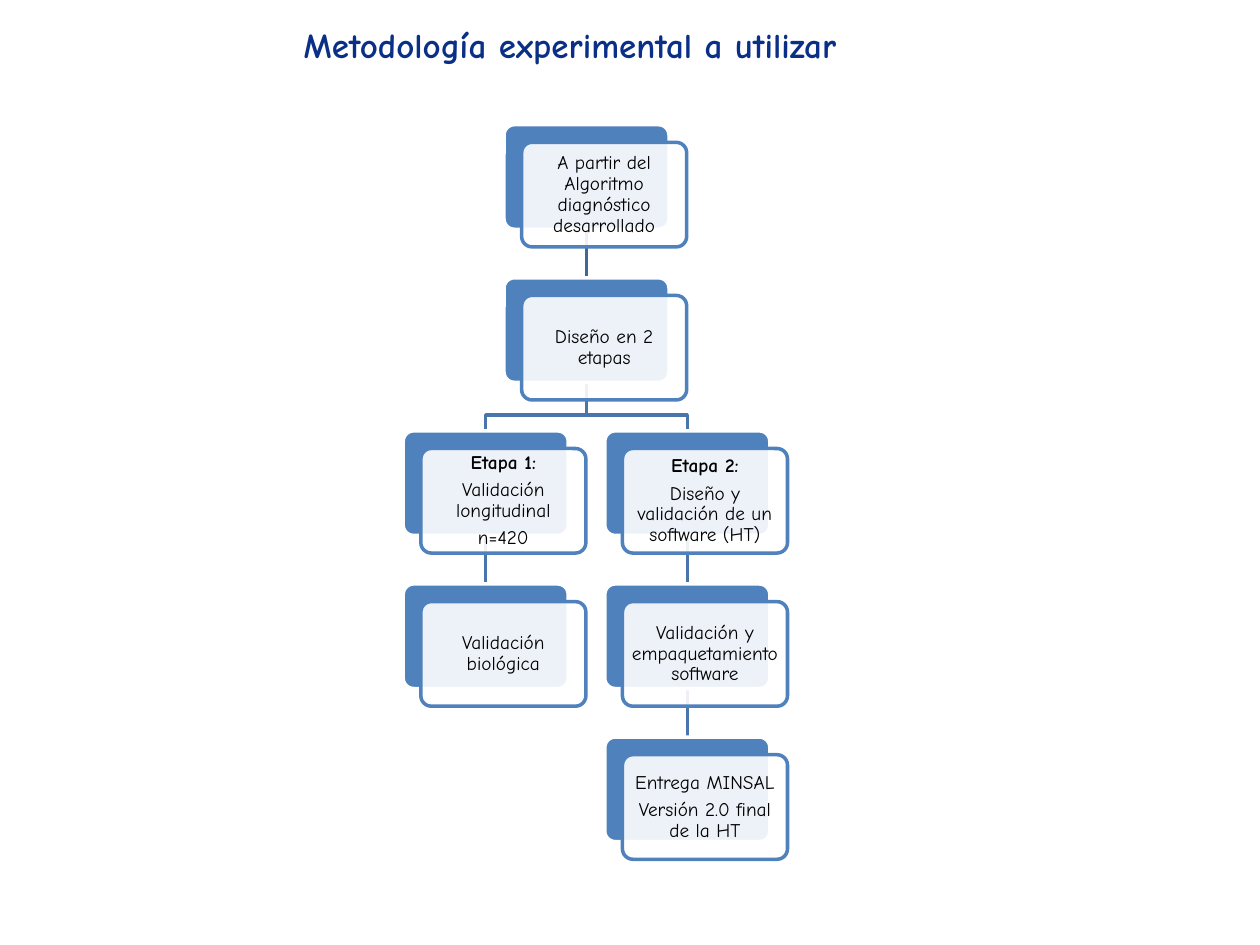
from dataclasses import dataclass

from lxml import etree
from pptx import Presentation
from pptx import util as u
from pptx.dml.color import RGBColor
from pptx.enum import shapes, text
from pptx.oxml import ns


@dataclass(frozen=True)
class Theme:
    font: str = "Comic Neue"
    title: str = "0A2F87"
    blue: str = "4F81BD"
    white: str = "FFFFFF"
    ink: str = "000000"
    stem: str = "3F6797"
    link: str = "4875AC"
    head: int = 20
    body: int = 11
    line: int = 2


T = Theme()
WIDE, HIGH = 1.31, 0.83
SHIFT, PAD = 0.14, 0.03
LEFT, TOP = 4.0, 0.99
COL, ROW = 0.8, 4.86 / 4

CARDS = {
    "start": (0, 0, ["A partir del Algoritmo diagnóstico desarrollado"]),
    "plan": (0, 1, ["Diseño en 2 etapas"]),
    "one": (-1, 2, ["Etapa 1:", "Validación longitudinal", "n=420"]),
    "bio": (-1, 3, ["Validación biológica"]),
    "two": (1, 2, ["Etapa 2:", "Diseño y validación de un software (HT)"]),
    "pack": (1, 3, ["Validación y empaquetamiento software"]),
    "final": (1, 4, ["Entrega MINSAL", "Versión 2.0 final de la HT"]),
}
STEMS = [("start", "plan", T.stem), ("one", "bio", T.link),
         ("two", "pack", T.link), ("pack", "final", T.link)]
FORKS = [("plan", "one"), ("plan", "two")]


def color(code):
    return RGBColor.from_string(code)


def write(slide, box, lines, size, ink, bold, inset):
    label = slide.shapes.add_textbox(*map(u.Inches, box))
    frame = label.text_frame
    frame.word_wrap = True
    frame.vertical_anchor = text.MSO_ANCHOR.MIDDLE
    frame.margin_left = frame.margin_right = u.Inches(inset)
    frame.margin_top = frame.margin_bottom = u.Inches(inset)
    for i, line in enumerate(lines):
        para = frame.add_paragraph() if i else frame.paragraphs[0]
        para.alignment = text.PP_ALIGN.CENTER
        run = para.add_run()
        run.text = line
        run.font.name = T.font
        run.font.size = u.Pt(size)
        run.font.bold = bold(line)
        run.font.color.rgb = color(ink)
    return frame


def plate(slide, box, fill, edge):
    shape = slide.shapes.add_shape(
        shapes.MSO_SHAPE.ROUNDED_RECTANGLE, *map(u.Inches, box))
    shape.adjustments[0] = 0.1
    shape.shadow.inherit = False
    shape.fill.solid()
    shape.fill.fore_color.rgb = color(fill)
    shape.line.color.rgb = color(edge)
    shape.line.width = u.Pt(T.line)
    return shape


def card(slide, box, lines):
    x, y, w, h = box
    back = plate(slide, box, T.blue, T.white)
    front = plate(slide, (x + SHIFT, y + SHIFT, w, h), T.white, T.blue)
    tint = front.fill._xPr.find(".//" + ns.qn("a:srgbClr"))
    etree.SubElement(tint, ns.qn("a:alpha"), val="90000")
    inner = (x + SHIFT + PAD, y + SHIFT + PAD, w - 2 * PAD, h - 2 * PAD)
    frame = write(slide, inner, lines, T.body, T.ink,
                  lambda line: line.startswith("Etapa"), 0.03)
    for para in frame.paragraphs:
        para.line_spacing = 0.9
        para.space_after = u.Pt(0.35 * T.body)
    return back


def lower(slide, shape, ink):
    shape.line.color.rgb = color(ink)
    shape.line.width = u.Pt(T.line)
    slide.shapes._spTree.insert(2, shape._element)


def stem(slide, above, below, ink):
    link = slide.shapes.add_connector(shapes.MSO_CONNECTOR.STRAIGHT, 0, 0, 0, 0)
    link.begin_connect(above, 2)
    link.end_connect(below, 0)
    etree.SubElement(link._element.spPr, ns.qn("a:effectLst"))
    lower(slide, link, ink)


def fork(slide, above, below):
    x, y = above.left + above.width // 2, above.top + above.height
    end = below.left + below.width // 2
    bend = y + u.Inches(0.26)
    path = slide.shapes.build_freeform(x, y)
    path.add_line_segments([(x, bend), (end, bend), (end, below.top)], close=False)
    shape = path.convert_to_shape()
    shape.shadow.inherit = False
    shape.fill.background()
    lower(slide, shape, T.link)


def chart(slide, box):
    left, top, wide, high = box
    backs = {}
    for name, (col, row, lines) in CARDS.items():
        place = (left + col * COL, top + row * ROW, wide, high)
        backs[name] = card(slide, place, lines)
    for above, below, ink in STEMS:
        stem(slide, backs[above], backs[below], ink)
    for above, below in FORKS:
        fork(slide, backs[above], backs[below])


def main():
    deck = Presentation()
    deck.slide_width, deck.slide_height = u.Inches(10), u.Inches(7.5)
    slide = deck.slides.add_slide(deck.slide_layouts[6])
    write(slide, (0.62, 0.04, 7.81, 0.63), ["Metodología experimental a utilizar"],
          T.head, T.title, lambda line: True, 0.05)
    chart(slide, (LEFT, TOP, WIDE, HIGH))
    deck.save("out.pptx")


if __name__ == "__main__":
    main()
